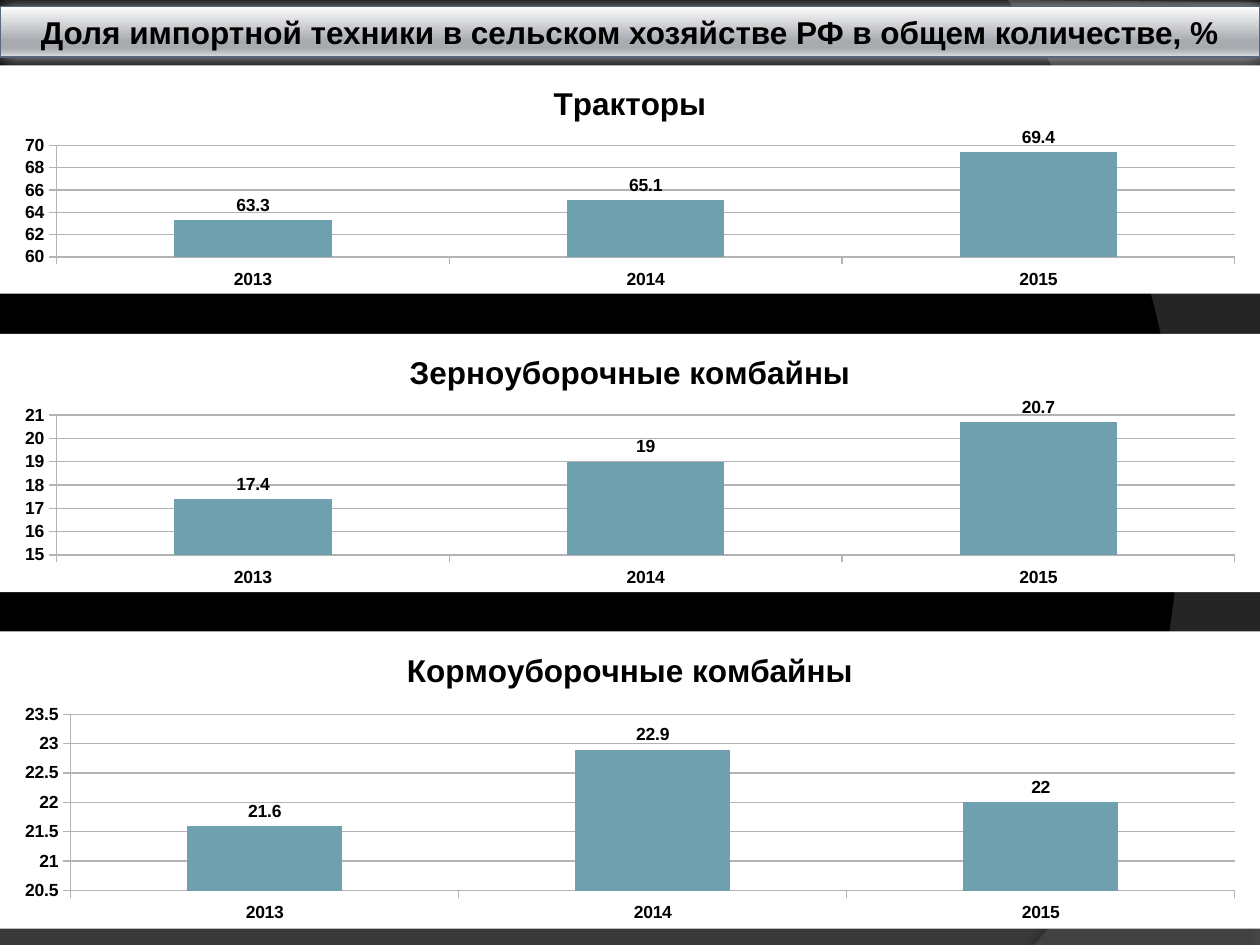
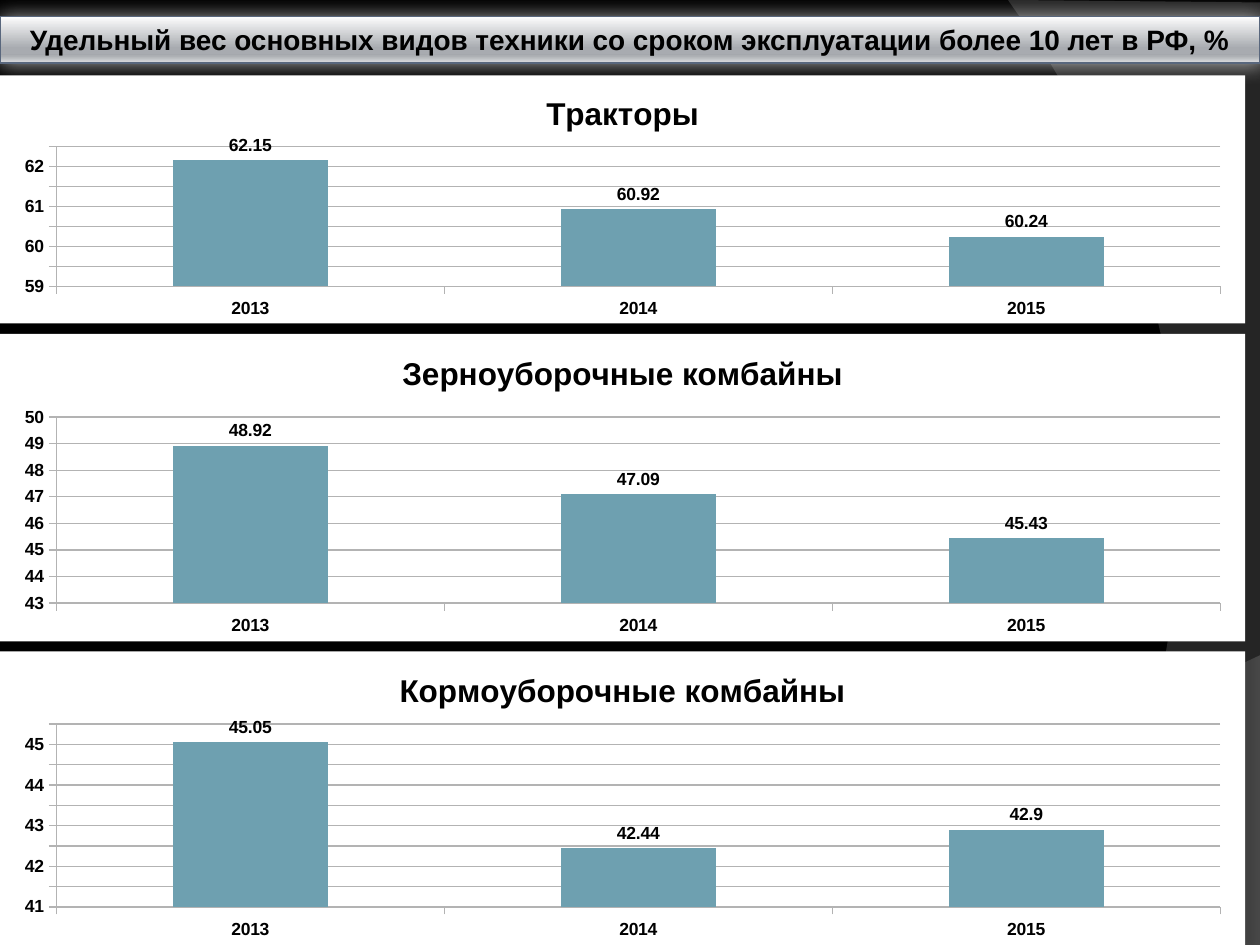
import lxml.etree
import pptx
import pptx.chart.data
import pptx.dml.color
import pptx.enum.chart
import pptx.enum.shapes
import pptx.enum.text
import pptx.oxml
import pptx.oxml.ns
import pptx.util

Cm = pptx.util.Cm
Pt = pptx.util.Pt
rgb = pptx.dml.color.RGBColor.from_string
qn = pptx.oxml.ns.qn

COLORS = {
    "page": "000000", "text": "000000", "chart": "FFFFFF", "bar": "6EA0B0",
    "grid": "B3B3B3", "title_line": "59677D", "glow": "FFFFFF",
    "floor": "7F7F7F", "side": "5E5E5E",
}
TITLE_STOPS = [(0, "FEFEFE"), (68, "A8ABB0"), (81, "A5A8AD"), (86, "AEB1B5"), (100, "DDDEE0")]
FONT = "Arial"
WIDTH, HEIGHT = 25.4, 19.05
YEARS = ["2013", "2014", "2015"]
MACHINES = ["Тракторы", "Зерноуборочные комбайны", "Кормоуборочные комбайны"]

PANELS = [
    ("floor", 45, 35, 270,
     [(0, 17.91), (0, HEIGHT), (WIDTH, HEIGHT), (WIDTH, 13.21)],
     [(14.2, 18.52), (9.93, 18.26), (0, 17.91)]),
    ("side", 40, 45, 180,
     [(WIDTH, 0.05), (WIDTH, HEIGHT), (20.85, HEIGHT)],
     [(23.75, 15.72), (25.86, 7.62), (20.32, 0)]),
]

SLIDES = [
    {"title": "Доля импортной техники в сельском хозяйстве РФ в общем количестве, %",
     "size": 18, "top": 0.13, "height": 1.02, "chart_width": WIDTH,
     "charts": [
         (1.32, 4.6, [63.3, 65.1, 69.4], (60, 70, 2)),
         (6.73, 5.21, [17.4, 19, 20.7], (15, 21, 1)),
         (12.73, 5.99, [21.6, 22.9, 22], (20.5, 23.5, 0.5))]},
    {"title": "Удельный вес основных видов техники со сроком эксплуатации более 10 лет в РФ, %",
     "size": 16, "top": 0.33, "height": 0.94, "chart_width": 25.1,
     "charts": [
         (1.52, 5, [62.15, 60.92, 60.24], (59, 62.5, 0.5)),
         (6.73, 6.2, [48.92, 47.09, 45.43], (43, 50, 1)),
         (13.13, 5.92, [45.05, 42.44, 42.9], (41, 45.5, 0.5))]},
]


def write_text(frame, text, size, align=pptx.enum.text.PP_ALIGN.CENTER):
    para = frame.paragraphs[0]
    para.alignment = align
    span = para.add_run()
    span.text = text
    span.font.name = FONT
    span.font.size = Pt(size)
    span.font.bold = True
    span.font.color.rgb = rgb(COLORS["text"])


def add_shadow(shape, color, alpha, blur, distance, angle):
    shape.shadow.inherit = False
    effects = shape.element.spPr.find(qn("a:effectLst"))
    shadow = lxml.etree.SubElement(
        effects, qn("a:outerShdw"), blurRad=str(Pt(blur)), dist=str(Pt(distance)),
        dir=str(angle * 60000), algn="ctr", rotWithShape="0")
    tint = lxml.etree.SubElement(shadow, qn("a:srgbClr"), val=color)
    lxml.etree.SubElement(tint, qn("a:alpha"), val=str(alpha * 1000))


deck = pptx.Presentation()
deck.slide_width = Cm(WIDTH)
deck.slide_height = Cm(HEIGHT)
master = deck.slide_master
master.background.fill.solid()
master.background.fill.fore_color.rgb = rgb(COLORS["page"])
pages = [deck.slides.add_slide(deck.slide_layouts[6]) for _ in SLIDES]

for name, alpha, shadow_alpha, angle, corners, controls in PANELS:
    start, (first, second, end) = corners[-1], controls
    points = list(corners)
    for step in range(1, 41):
        t = step / 40
        points.append(tuple(
            (1 - t) ** 3 * a + 3 * (1 - t) ** 2 * t * b + 3 * (1 - t) * t ** 2 * c + t ** 3 * d
            for a, b, c, d in zip(start, first, second, end)))
    outline = [(Cm(x), Cm(y)) for x, y in points]
    builder = pages[0].shapes.build_freeform(*outline[0])
    builder.add_line_segments(outline[1:], close=True)
    panel = builder.convert_to_shape()
    panel.fill.solid()
    panel.fill.fore_color.rgb = rgb(COLORS[name])
    panel.line.fill.background()
    tint = panel.element.spPr.find(qn("a:solidFill")).find(qn("a:srgbClr"))
    lxml.etree.SubElement(tint, qn("a:alpha"), val=str(alpha * 1000))
    add_shadow(panel, COLORS["page"], shadow_alpha, 4, 3.5, angle)
    master.shapes.element.append(panel.element)

for page, content in zip(pages, SLIDES):
    title = page.shapes.add_shape(
        pptx.enum.shapes.MSO_SHAPE.RECTANGLE,
        0, Cm(content["top"]), Cm(WIDTH), Cm(content["height"]))
    title.fill.gradient()
    title.fill.gradient_angle = 270
    stops = title.element.spPr.find(qn("a:gradFill")).find(qn("a:gsLst"))
    for stop in list(stops):
        stops.remove(stop)
    for position, color in TITLE_STOPS:
        stop = lxml.etree.SubElement(stops, qn("a:gs"), pos=str(position * 1000))
        lxml.etree.SubElement(stop, qn("a:srgbClr"), val=color)
    title.line.color.rgb = rgb(COLORS["title_line"])
    title.line.width = Pt(0.75)
    add_shadow(title, COLORS["glow"], 65, 12, 0, 0)
    title.text_frame.word_wrap = True
    title.text_frame.vertical_anchor = pptx.enum.text.MSO_ANCHOR.MIDDLE
    write_text(title.text_frame, content["title"], content["size"])

    for machine, (top, height, shares, scale) in zip(MACHINES, content["charts"]):
        data = pptx.chart.data.CategoryChartData()
        data.categories = YEARS
        data.add_series(machine, shares)
        chart = page.shapes.add_chart(
            pptx.enum.chart.XL_CHART_TYPE.COLUMN_CLUSTERED,
            0, Cm(top), Cm(content["chart_width"]), Cm(height), data).chart
        chart.font.name = FONT
        chart.font.size = Pt(10)
        chart.font.bold = True
        chart.font.color.rgb = rgb(COLORS["text"])
        chart.has_legend = False
        chart.has_title = True
        write_text(chart.chart_title.text_frame, machine, 18)
        chart.chart_title.include_in_layout = False

        backdrop = lxml.etree.Element(qn("c:spPr"))
        fill = lxml.etree.SubElement(backdrop, qn("a:solidFill"))
        lxml.etree.SubElement(fill, qn("a:srgbClr"), val=COLORS["chart"])
        border = lxml.etree.SubElement(backdrop, qn("a:ln"))
        lxml.etree.SubElement(border, qn("a:noFill"))
        chart.element.find(qn("c:chart")).addnext(backdrop)

        axis = chart.value_axis
        axis.minimum_scale, axis.maximum_scale, axis.major_unit = scale
        axis.has_major_gridlines = True
        axis.major_gridlines.format.line.color.rgb = rgb(COLORS["grid"])
        axis.tick_labels.number_format = "General"
        axis.tick_labels.number_format_is_linked = False
        for ruler in (axis, chart.category_axis):
            ruler.format.line.color.rgb = rgb(COLORS["grid"])
            ruler.major_tick_mark = pptx.enum.chart.XL_TICK_MARK.OUTSIDE

        plot = chart.plots[0]
        plot.vary_by_categories = False
        plot.gap_width = 150
        plot.has_data_labels = True
        plot.data_labels.show_value = True
        plot.data_labels.position = pptx.enum.chart.XL_LABEL_POSITION.OUTSIDE_END
        columns = plot.series[0].format
        columns.fill.solid()
        columns.fill.fore_color.rgb = rgb(COLORS["bar"])

deck.save("out.pptx")
